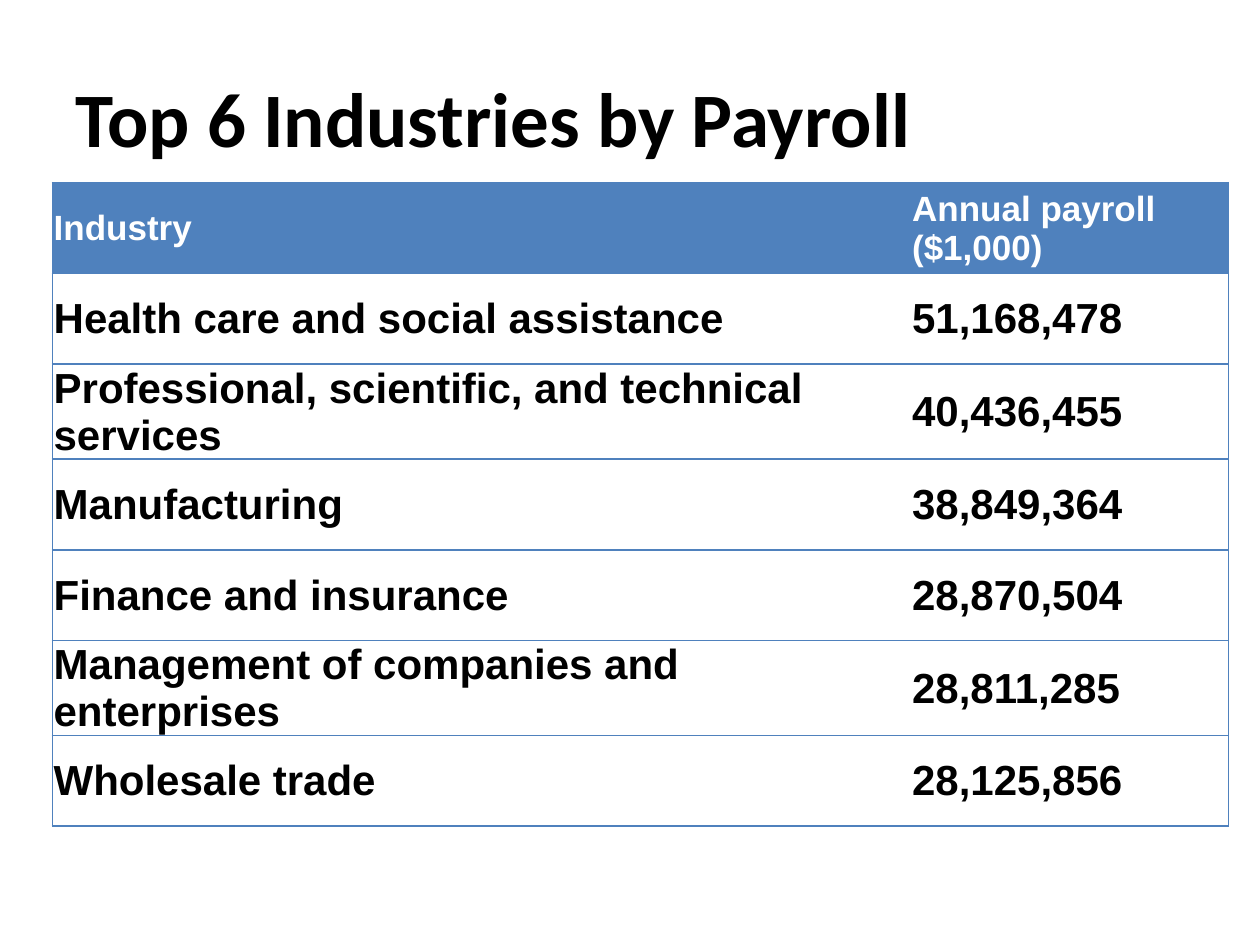
from dataclasses import dataclass

from lxml.etree import SubElement
from pptx import Presentation
from pptx.dml.color import RGBColor as Rgb
from pptx.enum.text import MSO_ANCHOR as Anchor, PP_ALIGN as Align
from pptx.oxml.ns import qn
from pptx.util import Pt


@dataclass(frozen=True)
class Theme:
    title_font: str = "Calibri"
    table_font: str = "Arial"
    title_size: float = 44
    header_size: float = 20
    body_size: float = 24
    ink: str = "000000"
    paper: str = "FFFFFF"
    accent: str = "4F81BD"
    rule: float = 1
    inset: float = 0.7


THEME = Theme()
TITLE = "Top 6 Industries by Payroll"
HEADER = ("Industry", "Annual payroll ($1,000)")
PAYROLL = [
    ("Health care and social assistance", "51,168,478"),
    ("Professional, scientific, and technical services", "40,436,455"),
    ("Manufacturing", "38,849,364"),
    ("Finance and insurance", "28,870,504"),
    ("Management of companies and enterprises", "28,811,285"),
    ("Wholesale trade", "28,125,856"),
]


def add_span(para, text, font, size, color):
    span = para.add_run()
    span.text = text
    span.font.name = font
    span.font.size = Pt(size)
    span.font.bold = True
    span.font.color.rgb = Rgb.from_string(color)


def set_borders(cell, visible):
    """Draw the named sides in the accent colour and clear the others."""
    props = cell._tc.get_or_add_tcPr()
    for side in "LRTB":
        line = SubElement(props, qn(f"a:ln{side}"), w=str(Pt(THEME.rule)))
        if side in visible:
            fill = SubElement(line, qn("a:solidFill"))
            SubElement(fill, qn("a:srgbClr"), val=THEME.accent)
        else:
            SubElement(line, qn("a:noFill"))


def fill_cell(cell, text, size, color, background, sides):
    set_borders(cell, sides)
    cell.fill.solid()
    cell.fill.fore_color.rgb = Rgb.from_string(background)
    cell.vertical_anchor = Anchor.MIDDLE
    cell.margin_left = cell.margin_right = cell.margin_top = Pt(THEME.inset)
    cell.margin_bottom = Pt(0)
    add_span(cell.text_frame.paragraphs[0], text, THEME.table_font, size, color)


def place_title(page, left, top, width, height):
    box = page.shapes.title
    box.left, box.top, box.width, box.height = map(Pt, (left, top, width, height))
    box.text_frame.vertical_anchor = Anchor.MIDDLE
    para = box.text_frame.paragraphs[0]
    para.alignment = Align.LEFT
    add_span(para, TITLE, THEME.title_font, THEME.title_size, THEME.ink)


def place_table(page, left, top, width, height, first_share=0.73):
    records = [HEADER, *PAYROLL]
    frame = page.shapes.add_table(
        len(records), len(HEADER), *map(Pt, (left, top, width, height)))
    table = frame.table
    table.horz_banding = False
    table.columns[0].width = Pt(width * first_share)
    table.columns[1].width = Pt(width * (1 - first_share))

    for row, record in enumerate(records):
        table.rows[row].height = Pt(height / len(records))
        if row == 0:
            style = (THEME.header_size, THEME.paper, THEME.accent)
        else:
            style = (THEME.body_size, THEME.ink, THEME.paper)
        # Only the outer edges have vertical rules
        for column, (text, sides) in enumerate(zip(record, ("LTB", "RTB"))):
            fill_cell(table.cell(row, column), text, *style, sides)


def main():
    deck = Presentation()
    deck.slide_width, deck.slide_height = Pt(720), Pt(540)
    page = deck.slides.add_slide(deck.slide_layouts.get_by_name("Title Only"))
    place_title(page, 36, 21.6, 648, 90)
    place_table(page, 30, 104.4, 672, 363)
    deck.save("out.pptx")


if __name__ == "__main__":
    main()
